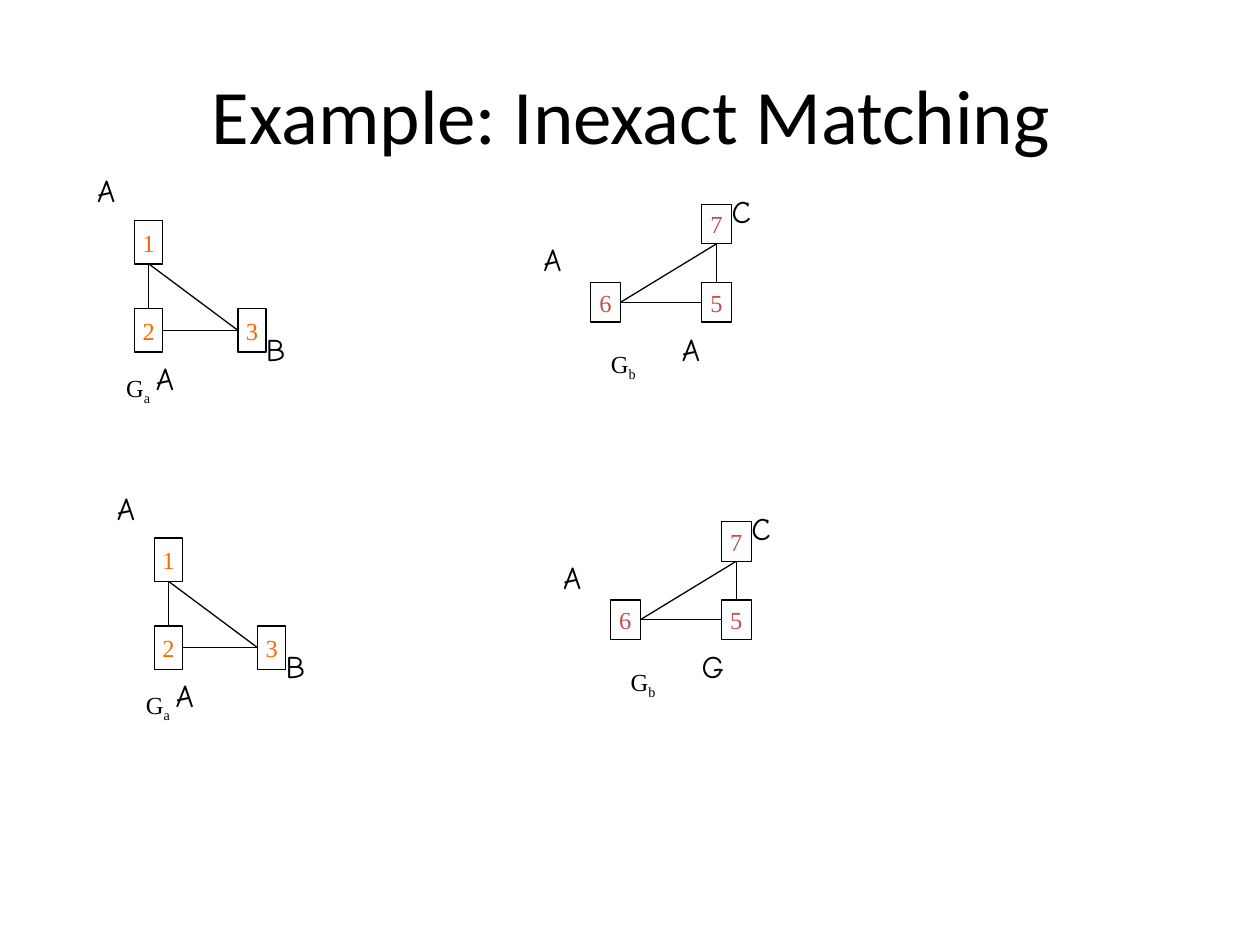
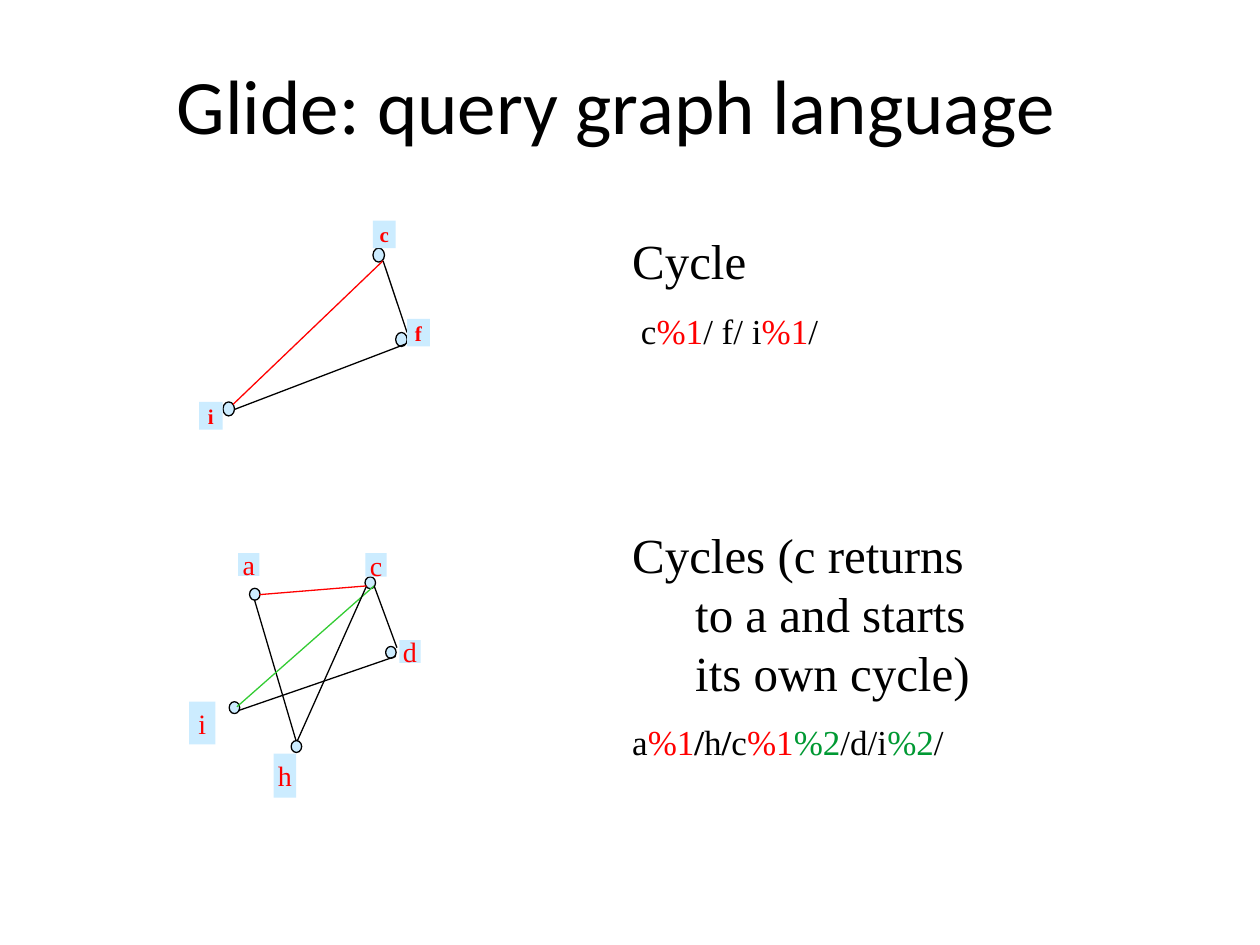
from lxml import etree
from pptx import Presentation
from pptx.dml.color import RGBColor
from pptx.enum.shapes import MSO_CONNECTOR, MSO_SHAPE
from pptx.enum.text import MSO_ANCHOR, PP_ALIGN
from pptx.oxml.ns import qn
from pptx.util import Pt

LINE = MSO_CONNECTOR.STRAIGHT
RECT, OVAL = MSO_SHAPE.RECTANGLE, MSO_SHAPE.OVAL
LEFT, MID = PP_ALIGN.LEFT, PP_ALIGN.CENTER
TOP, CORE = MSO_ANCHOR.TOP, MSO_ANCHOR.MIDDLE
BLACK, RED, GREEN, LIME = "000000", "FF0000", "009933", "33CC33"
ORANGE, ROSE, SKY = "FF6600", "C0504D", "CCECFF"
SERIF, HAND, SANS = "Times New Roman", "Comic Neue", "Calibri"
ABOVE, WEST, BELOW, EAST = range(4)

GRAPHS = [
    {
        "sub": "a", "tint": ORANGE, "label": (65, 209.5, 106, 24),
        "size": (16, 24.8),
        "nodes": {"1": (77, 126), "2": (77, 176.4), "3": (136, 176.4)},
        "edges": [("1", BELOW, "2", ABOVE), ("1", BELOW, "3", WEST),
                  ("2", EAST, "3", WEST)],
        "marks": [(48.4, 94.4), (144.9, 185), (82, 201.5)],
    },
    {
        "sub": "b", "tint": ROSE, "label": (342, 196, 98.6, 24),
        "size": (17, 22.5),
        "nodes": {"7": (401, 116.8), "5": (401, 161.5), "6": (337.6, 161.5)},
        "edges": [("7", BELOW, "5", ABOVE), ("6", EAST, "5", WEST),
                  ("6", EAST, "7", BELOW)],
        "marks": [(303.4, 133.8), (382.5, 185), (411, 106)],
    },
]
ROWS = [((0, 0), ("ABA", "AAC")), ((11.3, 181.4), ("ABA", "AGC"))]

CYCLES = [
    {
        "size": 12, "bold": True, "dot": (6.6, 8),
        "dots": [(127.4, 229.7), (213.1, 141.8), (226.1, 190)],
        "edges": [
            (133.2, 231.1, 218.9, 149, RED),
            (133.9, 234, 231.8, 196.6, BLACK),
            (232.6, 190, 218.9, 149, BLACK),
        ],
        "tags": [
            ("c", 213.1, 126, 13, 15.8),
            ("f", 232.6, 182.2, 13, 15.8),
            ("i", 113.8, 229.7, 13.5, 15.8),
        ],
    },
    {
        "size": 16, "bold": False, "dot": (6, 6.8),
        "dots": [(142.6, 336.2), (166.4, 423.2), (208.6, 329.6),
                 (220.4, 369.4), (131, 401)],
        "edges": [
            (145.4, 342.7, 169.2, 423.4, BLACK),
            (135.4, 403.9, 213.8, 334.8, LIME),
            (136.1, 406.1, 226.1, 375.1, BLACK),
            (226.8, 370.1, 213.8, 334.8, BLACK),
            (169.9, 423.4, 209.5, 334.8, BLACK),
            (148.3, 339.8, 209.5, 334.8, RED),
        ],
        "tags": [
            ("a", 136.1, 316.1, 12.2, 13),
            ("c", 208.8, 316.1, 12.2, 13.4),
            ("h", 156.4, 430.6, 12.8, 25.2),
            ("d", 228.2, 365.8, 12.2, 13),
            ("i", 108, 401, 15.1, 24.5),
        ],
    },
]

NOTES = [
    (0, 28, [("Cycle", BLACK, False)]),
    (11, 20, [(" c", BLACK, False), ("%1", RED, False),
              ("/ f/ i", BLACK, False), ("%1", RED, False),
              ("/", BLACK, False)]),
    (99, 28, [("Cycles (c returns to a and starts its own cycle)",
               BLACK, False)]),
    (11, 20, [("a", BLACK, False), ("%1", RED, False), ("/", BLACK, True),
              ("h", BLACK, False), ("/", BLACK, True), ("c", BLACK, False),
              ("%1", RED, False), ("%2", GREEN, False),
              ("/d/i", BLACK, False), ("%2", GREEN, False),
              ("/", BLACK, False)]),
]


def rgb(tint):
    return RGBColor.from_string(tint)


def assign(part, values):
    for key, value in values.items():
        setattr(part, key, value)


def write(para, text, size, face, tint=BLACK, bold=False):
    run = para.add_run()
    run.text = text
    assign(run.font, {"size": Pt(size), "name": face, "bold": bold})
    run.font.color.rgb = rgb(tint)
    return run


def add_text(slide, box, anchor=TOP, **frame):
    shape = slide.shapes.add_textbox(*map(Pt, box))
    assign(shape.text_frame,
           {"word_wrap": True, "vertical_anchor": anchor, **frame})
    return shape.text_frame


def add_title(slide, text, box, align, inset=7.2):
    frame = add_text(slide, box, CORE, margin_left=Pt(inset))
    para = frame.paragraphs[0]
    para.alignment = align
    write(para, text, 44, SANS)


def add_form(slide, kind, box, fill=None, line=None):
    shape = slide.shapes.add_shape(kind, *map(Pt, box))
    shape.shadow.inherit = False
    if fill:
        shape.fill.solid()
        shape.fill.fore_color.rgb = rgb(fill)
    else:
        shape.fill.background()
    if line:
        shape.line.color.rgb = rgb(line)
        shape.line.width = Pt(0.75)
    else:
        shape.line.fill.background()
    return shape


def add_node(slide, box, text, size, tint, bold=False, **style):
    shape = add_form(slide, RECT, box, **style)
    assign(shape.text_frame, {"word_wrap": False, "vertical_anchor": CORE})
    para = shape.text_frame.paragraphs[0]
    para.alignment = MID
    write(para, text, size, SERIF, tint, bold)
    return shape


def add_edge(slide, ends=(0, 0, 0, 0), tint=BLACK):
    edge = slide.shapes.add_connector(LINE, *map(Pt, ends))
    edge.line.color.rgb = rgb(tint)
    edge.line.width = Pt(0.75)
    etree.SubElement(edge._element.spPr, qn("a:effectLst"))
    return edge


def draw_graph(slide, graph, shift, marks):
    def move(x, y):
        return x + shift[0], y + shift[1]

    nodes = {
        name: add_node(slide, (*move(*spot), *graph["size"]), name, 14,
                       graph["tint"], line=BLACK)
        for name, spot in graph["nodes"].items()
    }
    for start, exit, end, entry in graph["edges"]:
        edge = add_edge(slide)
        edge.begin_connect(nodes[start], exit)
        edge.end_connect(nodes[end], entry)
    x, y, wide, high = graph["label"]
    para = add_text(slide, (*move(x, y), wide, high)).paragraphs[0]
    write(para, "G", 14, SERIF)
    sub = write(para, graph["sub"], 14, SERIF)
    sub.font._element.set("baseline", "-25000")
    for mark, spot in zip(marks, graph["marks"]):
        frame = add_text(slide, (*move(*spot), 51, 28.8))
        write(frame.paragraphs[0], mark, 18, HAND)


def draw_cycle(slide, cycle):
    for spot in cycle["dots"]:
        add_form(slide, OVAL, (*spot, *cycle["dot"]), SKY, BLACK)
    for *ends, tint in cycle["edges"]:
        add_edge(slide, ends, tint)
    for text, *box in cycle["tags"]:
        add_node(slide, box, text, cycle["size"], RED, cycle["bold"],
                 fill=SKY)


def draw_notes(slide):
    frame = add_text(slide, (354.2, 126, 228.2, 424.8), margin_top=Pt(6))
    for rank, (gap, size, runs) in enumerate(NOTES):
        para = frame.add_paragraph() if rank else frame.paragraphs[0]
        assign(para, {"alignment": LEFT, "space_before": Pt(gap)})
        props = para._p.get_or_add_pPr()
        props.set("marL", str(Pt(36)))
        props.set("indent", str(-Pt(36)))
        for text, tint, bold in runs:
            write(para, text, size, SERIF, tint, bold)


def main():
    deck = Presentation()
    assign(deck, {"slide_width": Pt(720), "slide_height": Pt(540)})
    blank = deck.slide_layouts[6]

    match = deck.slides.add_slide(blank)
    add_title(match, "Example: Inexact Matching", (36.7, 20.2, 648, 90), MID)
    for shift, marks in ROWS:
        for graph, letters in zip(GRAPHS, marks):
            draw_graph(match, graph, shift, letters)

    query = deck.slides.add_slide(blank)
    add_title(query, "Glide: query graph language", (54, 21.6, 612, 74.9),
              LEFT, 47)
    for cycle in CYCLES:
        draw_cycle(query, cycle)
    draw_notes(query)
    deck.save("out.pptx")


if __name__ == "__main__":
    main()
